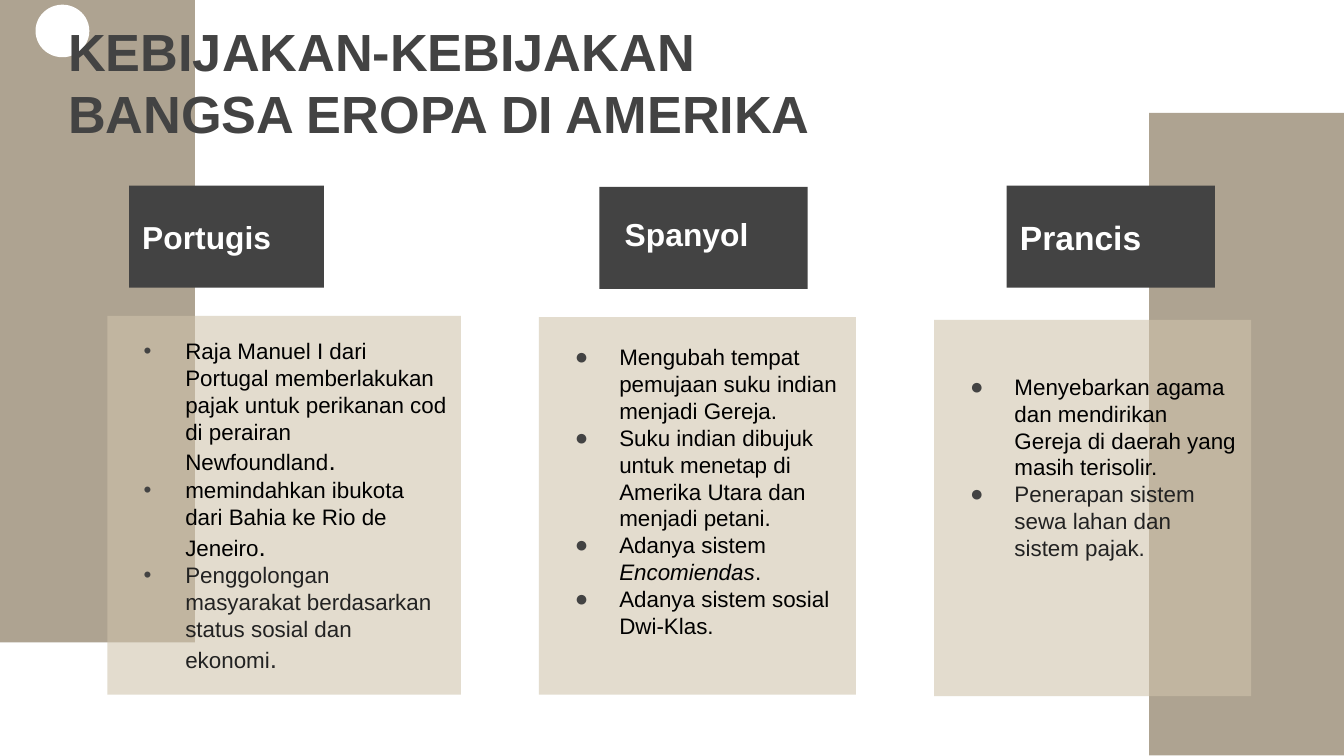
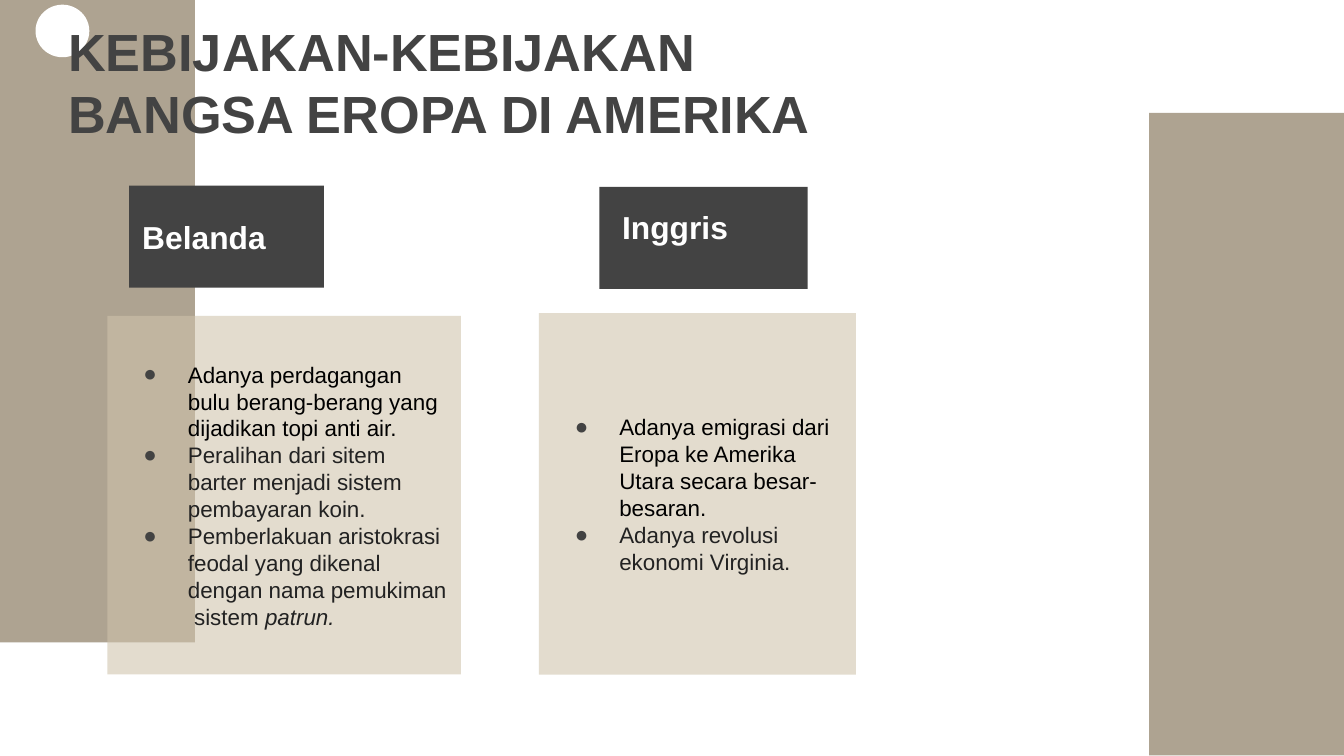
from dataclasses import dataclass

from lxml import etree
from pptx import Presentation
from pptx.dml.color import RGBColor
from pptx.enum.shapes import MSO_SHAPE
from pptx.enum.text import MSO_ANCHOR
from pptx.oxml.ns import qn
from pptx.util import Pt

RECT, OVAL = MSO_SHAPE.RECTANGLE, MSO_SHAPE.OVAL
TOP, MIDDLE, BOTTOM = MSO_ANCHOR.TOP, MSO_ANCHOR.MIDDLE, MSO_ANCHOR.BOTTOM


@dataclass(frozen=True)
class Theme:
    font: str = "Arial"
    band: str = "908269"
    panel: str = "CFC3AC"
    dark: str = "434343"
    white: str = "FFFFFF"
    black: str = "000000"
    gray: str = "222222"
    stop: str = "2C2C2C"
    title_size: int = 28
    body_size: int = 12
    stop_size: int = 14
    inset: float = 7.2


T = Theme()
BLACK = (T.body_size, T.black, False)
GRAY = (T.body_size, T.gray, False)
BLACK_ITALIC = (T.body_size, T.black, True)
GRAY_ITALIC = (T.body_size, T.gray, True)
BIG_STOP = (T.stop_size, T.black, False)
GRAY_STOP = (T.stop_size, T.stop, False)

TITLE = "KEBIJAKAN-KEBIJAKAN BANGSA EROPA DI AMERIKA"
BANDS = [(615.6, 60.5), (0, 0)]
DOT = ("•", 34.6, 22.3)
DISC = ("●", 36, 23.8)

# Column frames: left and width of the panel, then the header box
LEFT_COL = (57.6, 189.4, (69.1, 99.4, 104.4, 54.7))
MID_COL = (288.7, 169.9, (321.1, 100.1, 111.6, 54.7))
RIGHT_COL = (500.4, 169.9, (539.3, 99.4, 111.6, 54.7))

# Each column: frame, heading, heading size, separate heading box or None,
# panel top and height, extra bottom inset, bullet style, items made of runs
SLIDES = [
    [
        (LEFT_COL, "Portugis", 17, None, 169.2, 203, 0, DOT, [
            [("Raja Manuel I dari Portugal memberlakukan pajak untuk perikanan cod "
              "di perairan Newfoundland", BLACK), (".", BIG_STOP)],
            [("memindahkan ibukota dari Bahia ke Rio de Jeneiro", BLACK), (".", BIG_STOP)],
            [("Penggolongan masyarakat berdasarkan status sosial dan ekonomi", GRAY),
             (".", GRAY_STOP)],
        ]),
        (MID_COL, "Spanyol", 17, (327.6, 112.3, 104.4, 30.2), 169.9, 202.3, 16, DISC, [
            [("Mengubah tempat pemujaan suku indian menjadi Gereja.", BLACK)],
            [("Suku indian dibujuk untuk menetap di  Amerika Utara dan menjadi petani.", BLACK)],
            [("Adanya sistem ", BLACK), ("Encomiendas", BLACK_ITALIC), (".", BLACK)],
            [("Adanya sistem sosial Dwi-Klas.", BLACK)],
        ]),
        (RIGHT_COL, "Prancis", 18, None, 171.4, 201.6, 44, DISC, [
            [("Menyebarkan agama  dan mendirikan Gereja di daerah yang masih terisolir.", BLACK)],
            [("Penerapan sistem sewa lahan dan sistem pajak.", GRAY)],
        ]),
    ],
    [
        (LEFT_COL, "Belanda", 17, None, 169.2, 192.2, 0, DISC, [
            [("Adanya perdagangan bulu berang-berang yang dijadikan topi anti air.", BLACK)],
            [("Peralihan dari sitem barter menjadi sistem pembayaran koin.", GRAY)],
            [("Pemberlakuan aristokrasi feodal yang dikenal dengan nama pemukiman  sistem ", GRAY),
             ("patrun.", GRAY_ITALIC)],
        ]),
        (MID_COL, "Inggris", 17, (326.2, 108.7, 111.6, 30.2), 167.8, 193.7, 0, DISC, [
            [("Adanya emigrasi dari Eropa ke Amerika Utara secara besar-besaran.", BLACK)],
            [("Adanya revolusi ekonomi Virginia.", GRAY)],
        ]),
    ],
]


def add_box(s, box, fill=None, alpha=100, kind=RECT):
    """Add a filled shape, or a text box when there is no fill."""
    box = [Pt(v) for v in box]
    if fill is None:
        sp = s.shapes.add_textbox(*box)
    else:
        sp = s.shapes.add_shape(kind, *box)
        sp.shadow.inherit = False
        sp.fill.solid()
        sp.fill.fore_color.rgb = RGBColor.from_string(fill)
        sp.line.fill.background()
        if alpha < 100:
            color = sp.fill._xPr.find(".//" + qn("a:srgbClr"))
            etree.SubElement(color, qn("a:alpha"), val=str(alpha * 1000))
    return sp


def write(sp, paragraphs, anchor, bold=False, bullet=None, extra_bottom=0):
    """Fill a shape with paragraphs, each a list of (text, (size, colour, italic))."""
    tf = sp.text_frame
    tf.word_wrap = True
    tf.vertical_anchor = anchor
    tf.margin_left = tf.margin_right = tf.margin_top = Pt(T.inset)
    tf.margin_bottom = Pt(T.inset + extra_bottom)
    for i, runs in enumerate(paragraphs):
        p = tf.add_paragraph() if i else tf.paragraphs[0]
        pPr = p._p.get_or_add_pPr()
        pPr.set("algn", "l")
        if bullet:
            char, margin, hang = bullet
            pPr.set("marL", str(Pt(margin)))
            pPr.set("indent", str(-Pt(hang)))
            color = etree.SubElement(pPr, qn("a:buClr"))
            etree.SubElement(color, qn("a:srgbClr"), val=T.dark)
            etree.SubElement(pPr, qn("a:buFont"), typeface=T.font)
            etree.SubElement(pPr, qn("a:buChar"), char=char)
        for text, (size, rgb, italic) in runs:
            r = p.add_run()
            r.text = text
            r.font.name = T.font
            r.font.size = Pt(size)
            r.font.bold = bold
            r.font.italic = italic
            r.font.color.rgb = RGBColor.from_string(rgb)


prs = Presentation()
prs.slide_width, prs.slide_height = Pt(720), Pt(405)

for columns in SLIDES:
    s = prs.slides.add_slide(prs.slide_layouts[6])
    for left, top in BANDS:
        add_box(s, (left, top, 104.4, 344.2), T.band, 73)

    circle = add_box(s, (19.4, 2.9, 28.1, 27.4), T.white, kind=OVAL)
    circle.line.color.rgb = RGBColor.from_string(T.white)
    circle.line.width = Pt(0.75)
    title = add_box(s, (29.5, 2.9, 412.6, 82.1))
    write(title, [[(TITLE, (T.title_size, T.dark, False))]], TOP, bold=True)

    for frame, heading, size, heading_box, top, height, extra, bullet, items in columns:
        left, width, header_box = frame
        header = add_box(s, header_box, T.dark)
        label, anchor = header, MIDDLE
        if heading_box:
            label, anchor = add_box(s, heading_box), BOTTOM
        write(label, [[(heading, (size, T.white, False))]], anchor, bold=True)

        panel = add_box(s, (left, top, width, height), T.panel, 58)
        write(panel, items, MIDDLE, bullet=bullet, extra_bottom=extra)

prs.save("out.pptx")
